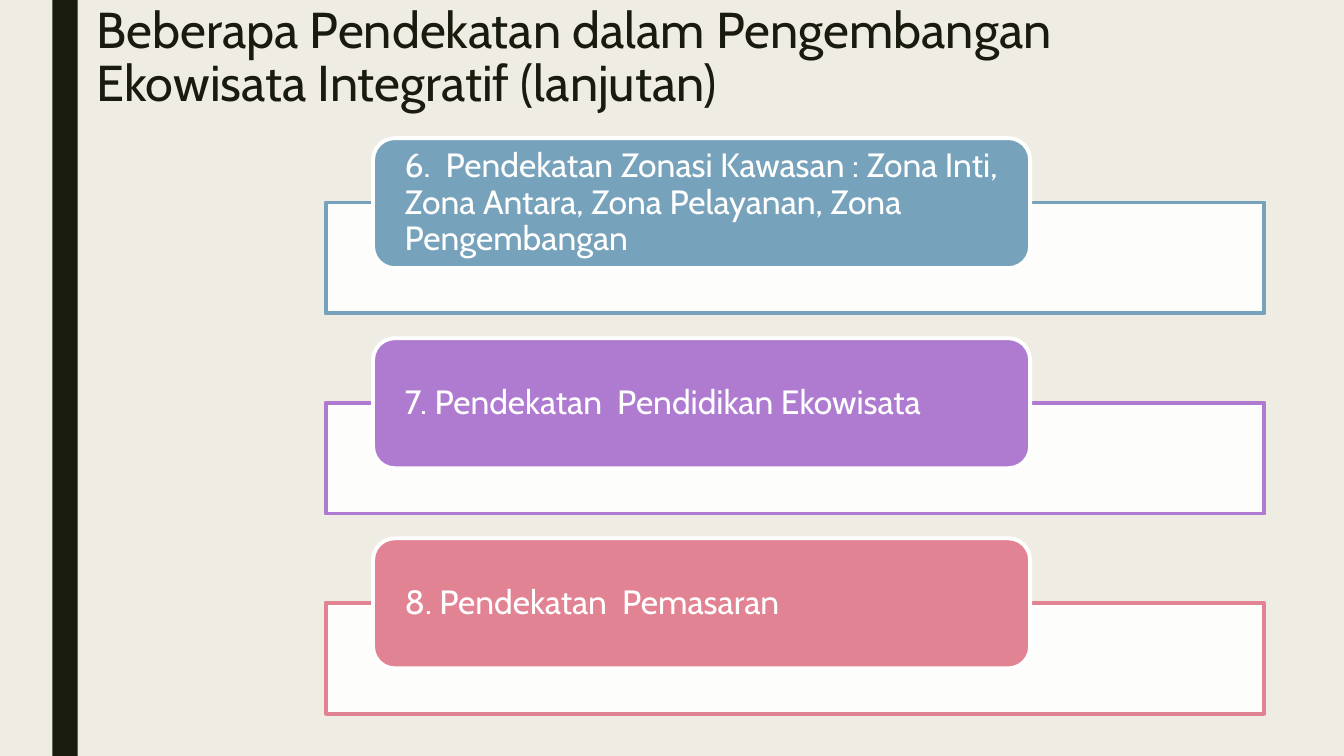
from pptx import Presentation
from pptx.dml.color import RGBColor
from pptx.enum.shapes import MSO_SHAPE as Shape
from pptx.enum.text import MSO_ANCHOR as Anchor, PP_ALIGN as Align
from pptx.oxml.ns import qn
from pptx.util import Inches, Pt
from lxml.etree import SubElement

CREAM = RGBColor(0xEF, 0xED, 0xE3)
INK = RGBColor(0x19, 0x1B, 0x0E)
WHITE = RGBColor(0xFF, 0xFF, 0xFF)
BLUE = RGBColor(0x77, 0xA2, 0xBB)
PURPLE = RGBColor(0xAE, 0x7B, 0xD0)
ROSE = RGBColor(0xE2, 0x83, 0x94)

FONT = "Cabin"
TITLE = "Beberapa Pendekatan dalam Pengembangan Ekowisata Integratif (lanjutan)"
APPROACHES = [
    ("6.  Pendekatan Zonasi Kawasan : Zona Inti, Zona Antara, "
     "Zona Pelayanan, Zona Pengembangan", BLUE),
    ("7. Pendekatan  Pendidikan Ekowisata", PURPLE),
    ("8. Pendekatan  Pemasaran", ROSE),
]


def write(shape, text, *, size, color, spacing, anchor, inset_x, inset_y):
    frame = shape.text_frame
    frame.word_wrap = True
    frame.vertical_anchor = anchor
    frame.margin_left = frame.margin_right = Inches(inset_x)
    frame.margin_top = frame.margin_bottom = Inches(inset_y)
    paragraph = frame.paragraphs[0]
    paragraph.alignment = Align.LEFT
    paragraph.line_spacing = spacing
    run = paragraph.add_run()
    run.text = text
    run.font.name = FONT
    run.font.size = Pt(size)
    run.font.color.rgb = color


def add_panel(slide, kind, left, top, width, height, fill, line=None, opacity=100):
    panel = slide.shapes.add_shape(
        kind, Inches(left), Inches(top), Inches(width), Inches(height))
    panel.shadow.inherit = False
    panel.fill.solid()
    panel.fill.fore_color.rgb = fill
    if opacity < 100:
        color = panel.fill._xPr.find(qn("a:solidFill"))[0]
        SubElement(color, qn("a:alpha"), val=str(opacity * 1000))
    if line is None:
        panel.line.fill.background()
    else:
        panel.line.color.rgb = line
        panel.line.width = Pt(2.75)
    return panel


def add_title(slide, left, top, width, height):
    title = slide.shapes.add_textbox(
        Inches(left), Inches(top), Inches(width), Inches(height))
    write(title, TITLE, size=36, color=INK, spacing=0.89,
          anchor=Anchor.TOP, inset_x=0.1, inset_y=0.05)


def add_approach(slide, left, top, width, text, accent):
    # Pale frame behind, coloured label overlapping its top edge
    add_panel(slide, Shape.RECTANGLE, left, top + 0.64, width, 1.1,
              WHITE, line=accent, opacity=90)
    label = add_panel(slide, Shape.ROUNDED_RECTANGLE, left + 0.47, top,
                      width * 0.7, 1.29, accent, line=WHITE)
    write(label, text, size=24, color=WHITE, spacing=0.9,
          anchor=Anchor.MIDDLE, inset_x=0.25, inset_y=0)


def add_approach_list(slide, left, top, width, height):
    row_height = 1.74
    pitch = (height - row_height) / (len(APPROACHES) - 1)
    for row, (text, accent) in enumerate(APPROACHES):
        add_approach(slide, left, top + row * pitch, width, text, accent)


def main():
    deck = Presentation()
    deck.slide_width = Inches(13.33)
    deck.slide_height = Inches(7.5)
    slide = deck.slides.add_slide(deck.slide_layouts[6])

    # Background and side bar
    slide.background.fill.solid()
    slide.background.fill.fore_color.rgb = CREAM
    add_panel(slide, Shape.RECTANGLE, 0.52, 0, 0.25, 7.5, INK)

    # Content
    add_title(slide, 0.86, 0, 10.5, 1.62)
    add_approach_list(slide, 3.23, 1.37, 9.31, 5.71)
    deck.save("out.pptx")


if __name__ == "__main__":
    main()
